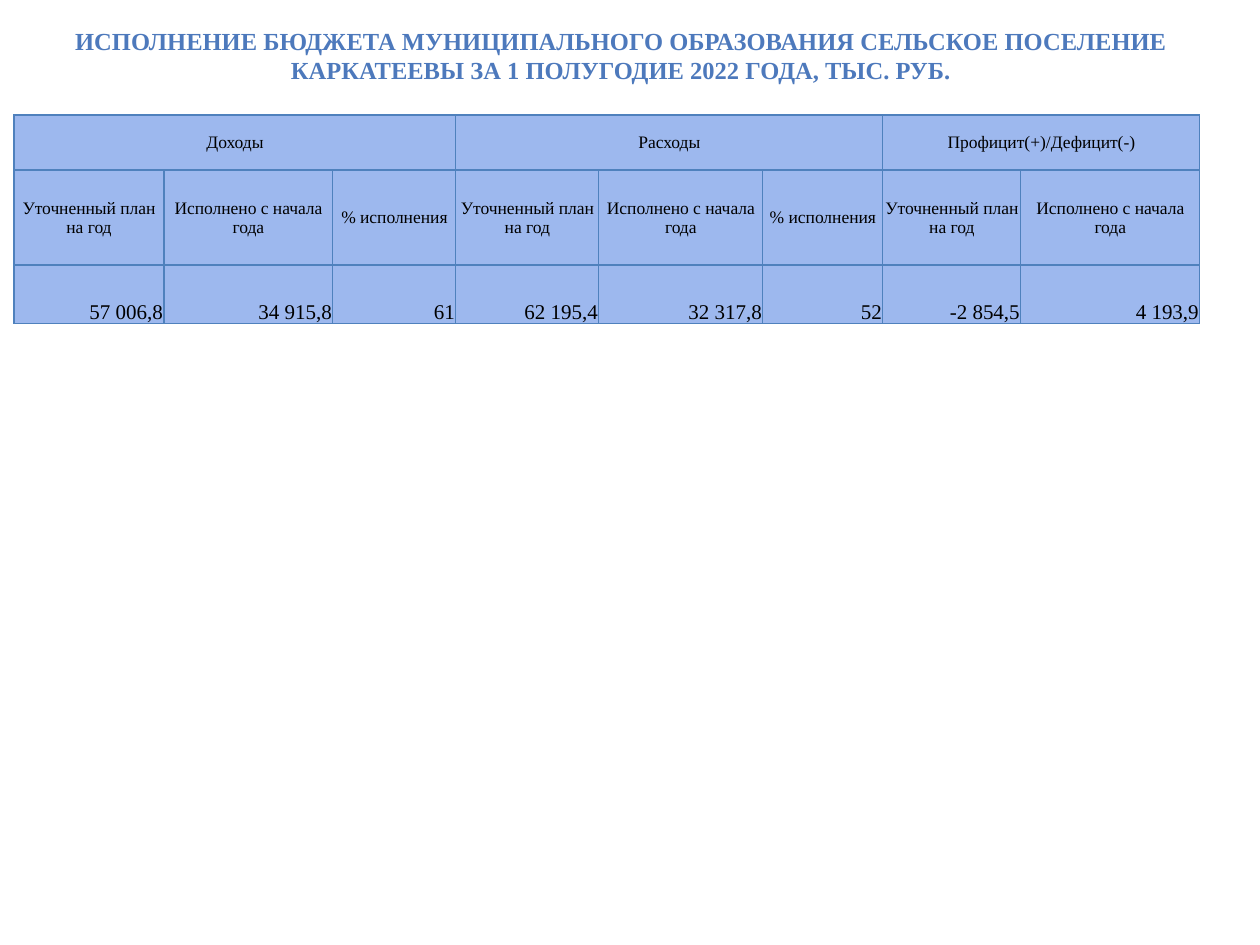
"""Build a slide with a budget execution table for the first half of 2022."""
from lxml import etree
from pptx import Presentation
from pptx.dml.color import RGBColor
from pptx.enum.text import MSO_ANCHOR, PP_ALIGN
from pptx.oxml.ns import qn
from pptx.util import Emu, Pt

MIDDLE, BOTTOM = MSO_ANCHOR.MIDDLE, MSO_ANCHOR.BOTTOM
CENTER, RIGHT = PP_ALIGN.CENTER, PP_ALIGN.RIGHT
FONT = "Times New Roman"
TITLE = ("ИСПОЛНЕНИЕ БЮДЖЕТА МУНИЦИПАЛЬНОГО ОБРАЗОВАНИЯ СЕЛЬСКОЕ ПОСЕЛЕНИЕ "
         "КАРКАТЕЕВЫ ЗА 1 ПОЛУГОДИЕ 2022 ГОДА, ТЫС. РУБ.")
PLAN, DONE, SHARE = "Уточненный план на год", "Исполнено с начала года", "% исполнения"
GROUPS = [("Доходы", 0, 2), ("Расходы", 3, 5), ("Профицит(+)/Дефицит(-)", 6, 7)]
HEADS = [PLAN, DONE, SHARE, PLAN, DONE, SHARE, PLAN, DONE]
VALUES = ["57 006,8", "34 915,8", "61", "62 195,4", "32 317,8", "52", "-2 854,5", "4 193,9"]
WIDTHS = [150, 169, 123, 143, 164, 120, 138, 179]
HEIGHTS = [55, 95, 59]


def px(num):
    return Emu(round(num * 914400 / 126))


def style(frame, size, color, align, bold=False):
    for para in frame.paragraphs:
        para.alignment = align
        for run in para.runs:
            font = run.font
            font.name, font.size, font.bold = FONT, Pt(size), bold
            font.color.rgb = RGBColor.from_string(color)


deck = Presentation()
deck.slide_width, deck.slide_height = px(1260), px(945)
slide = deck.slides.add_slide(deck.slide_layouts[6])

frame = slide.shapes.add_textbox(px(54), px(17), px(1134), px(77)).text_frame
frame.word_wrap = True
frame.vertical_anchor = MIDDLE
frame.margin_left = frame.margin_right = px(14)
frame.margin_top = frame.margin_bottom = px(7)
frame.text = TITLE
style(frame, 14, "4D79BC", CENTER, True)

table = slide.shapes.add_table(3, 8, px(14), px(115), px(sum(WIDTHS)), px(sum(HEIGHTS))).table
table.first_row = table.horz_banding = False
for col, width in zip(table.columns, WIDTHS):
    col.width = px(width)
for row, height in zip(table.rows, HEIGHTS):
    row.height = px(height)

for text, first, last in GROUPS:
    table.cell(0, first).merge(table.cell(0, last))
    table.cell(0, first).text = text
for num, (head, value) in enumerate(zip(HEADS, VALUES)):
    table.cell(1, num).text = head
    table.cell(2, num).text = value

for row in range(3):
    size, align, anchor = (12, RIGHT, BOTTOM) if row == 2 else (10, CENTER, MIDDLE)
    for num in range(8):
        cell = table.cell(row, num)
        cell.margin_left = cell.margin_right = cell.margin_top = px(1)
        cell.margin_bottom = 0
        cell.vertical_anchor = anchor
        style(cell.text_frame, size, "000000", align)
        props = cell._tc.get_or_add_tcPr()
        for side in ("a:lnL", "a:lnR", "a:lnT", "a:lnB"):
            line = etree.SubElement(props, qn(side), w=str(Pt(0.75)))
            fill = etree.SubElement(line, qn("a:solidFill"))
            etree.SubElement(fill, qn("a:srgbClr"), val="4F81BD")
        cell.fill.solid()
        cell.fill.fore_color.rgb = RGBColor.from_string("9DB8EE")

deck.save("out.pptx")
